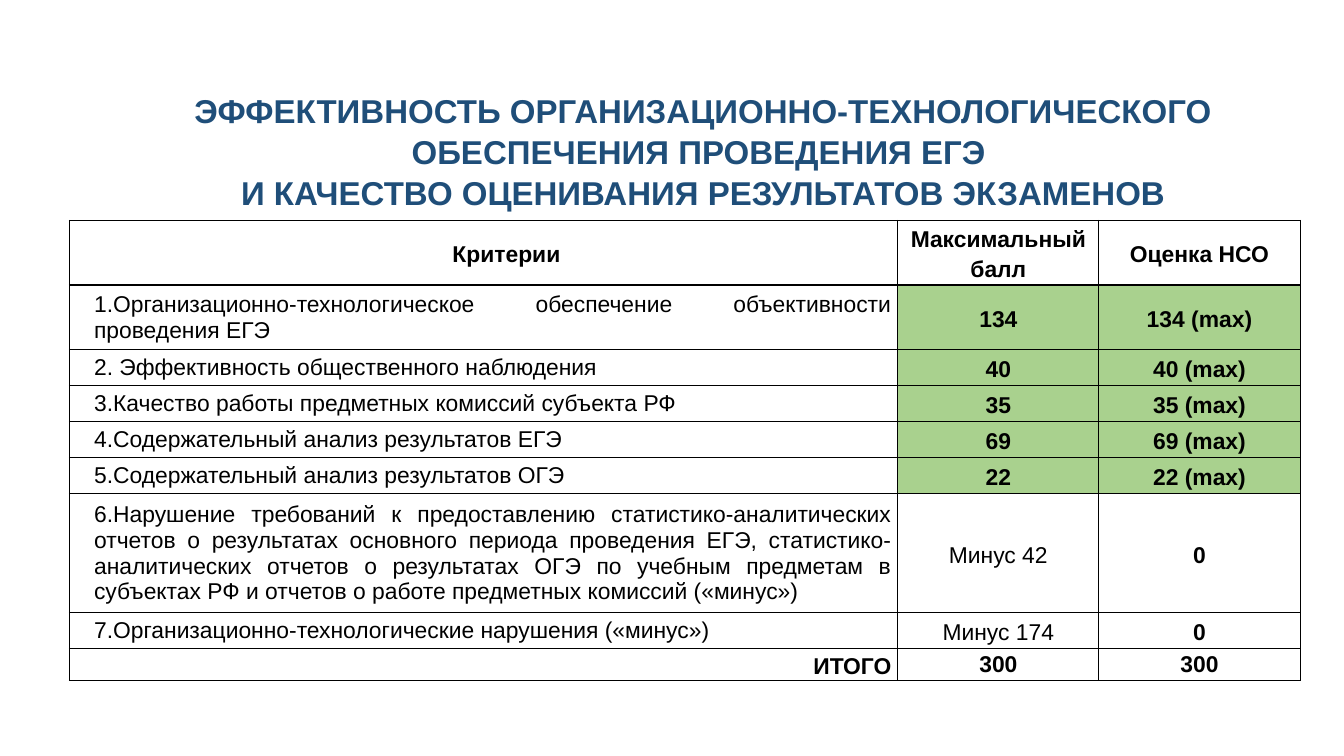
from lxml import etree
from pptx import Presentation
from pptx.dml.color import RGBColor
from pptx.enum.text import MSO_ANCHOR, MSO_AUTO_SIZE, PP_ALIGN
from pptx.oxml.ns import qn
from pptx.util import Pt

CENTER, JUSTIFY, RIGHT = PP_ALIGN.CENTER, PP_ALIGN.JUSTIFY, PP_ALIGN.RIGHT
MIDDLE = MSO_ANCHOR.MIDDLE
NO_AUTOFIT = MSO_AUTO_SIZE.NONE
TITLE_ONLY = 5

COLORS = {"heading": "1F4E79", "text": "000000", "border": "000000", "maximum": "A9D18E"}

HEADING = [
    "ЭФФЕКТИВНОСТЬ ОРГАНИЗАЦИОННО-ТЕХНОЛОГИЧЕСКОГО ОБЕСПЕЧЕНИЯ ПРОВЕДЕНИЯ ЕГЭ ",
    "И КАЧЕСТВО ОЦЕНИВАНИЯ РЕЗУЛЬТАТОВ ЭКЗАМЕНОВ",
]
HEADER = ("Критерии", "Максимальный балл", "Оценка НСО")
CRITERIA = [
    ("1.Организационно-технологическое обеспечение объективности проведения ЕГЭ",
     "134", "134 (max)"),
    ("2. Эффективность общественного наблюдения", "40", "40 (max)"),
    ("3.Качество работы предметных комиссий субъекта РФ", "35", "35 (max)"),
    ("4.Содержательный анализ результатов ЕГЭ", "69", "69 (max)"),
    ("5.Содержательный анализ результатов ОГЭ", "22", "22 (max)"),
    ("6.Нарушение требований к предоставлению статистико-аналитических отчетов "
     "о результатах основного периода проведения ЕГЭ, статистико-аналитических "
     "отчетов о результатах ОГЭ по учебным предметам в субъектах РФ и отчетов "
     "о работе предметных комиссий («минус»)", "Минус 42", "0"),
    ("7.Организационно-технологические нарушения («минус»)", "Минус 174", "0"),
]
TOTAL = ("ИТОГО", "300", "300")
COLUMN_WIDTHS = [652.3, 158.4, 158.4]
ROW_HEIGHTS = [51, 51] + [28.4] * 4 + [93.6, 28.4, 25.2]


class SlideBuilder:
    def __init__(self, slide, font="Arial"):
        self.slide = slide
        self.font = font

    def add_text(self, paragraph, text, size, color, bold, align, spacing=1.0, indent=0):
        if indent:
            properties = paragraph._p.get_or_add_pPr()
            properties.set("marL", str(Pt(indent)))
            properties.set("indent", "0")
        paragraph.alignment = align
        paragraph.line_spacing = spacing
        paragraph.space_before = paragraph.space_after = Pt(0)
        run = paragraph.add_run()
        run.text = text
        run.font.name = self.font
        run.font.size = Pt(size)
        run.font.bold = bold
        run.font.color.rgb = RGBColor.from_string(COLORS[color])

    def heading(self, lines, left, top, width, height):
        title = self.slide.shapes.title
        title.left, title.top = Pt(left), Pt(top)
        title.width, title.height = Pt(width), Pt(height)
        frame = title.text_frame
        frame.word_wrap = True
        frame.auto_size = NO_AUTOFIT
        frame.vertical_anchor = MIDDLE
        for number, line in enumerate(lines):
            paragraph = frame.add_paragraph() if number else frame.paragraphs[0]
            self.add_text(paragraph, line, 26, "heading", True, CENTER, 1.04)

    def grid(self, left, top, column_widths, row_heights):
        table = self.slide.shapes.add_table(
            len(row_heights), len(column_widths), Pt(left), Pt(top),
            Pt(sum(column_widths)), Pt(sum(row_heights))).table
        table.first_row = table.horz_banding = False
        for column, width in zip(table.columns, column_widths):
            column.width = Pt(width)
        for row, height in zip(table.rows, row_heights):
            row.height = Pt(height)
        return table

    def cell(self, cell, text, bold=True, align=CENTER, spacing=1.15, indent=0, fill=None):
        cell.margin_left = cell.margin_right = Pt(5)
        cell.margin_top = cell.margin_bottom = Pt(0)
        cell.vertical_anchor = MIDDLE
        self.borders(cell)
        if fill:
            cell.fill.solid()
            cell.fill.fore_color.rgb = RGBColor.from_string(COLORS[fill])
        else:
            cell.fill.background()
        self.add_text(cell.text_frame.paragraphs[0], text, 18, "text", bold, align,
                      spacing, indent)

    def borders(self, cell):
        properties = cell._tc.get_or_add_tcPr()
        for side in ("a:lnL", "a:lnR", "a:lnT", "a:lnB"):
            line = etree.SubElement(properties, qn(side), w=str(Pt(1)))
            paint = etree.SubElement(line, qn("a:solidFill"))
            etree.SubElement(paint, qn("a:srgbClr"), val=COLORS["border"])


def main():
    presentation = Presentation()
    presentation.slide_width, presentation.slide_height = Pt(1058.4), Pt(595.44)
    slide = presentation.slides.add_slide(presentation.slide_layouts[TITLE_ONLY])
    builder = SlideBuilder(slide)
    builder.heading(HEADING, 118.1, 67.7, 871.9, 102.2)

    scores = builder.grid(54.7, 173.5, COLUMN_WIDTHS, ROW_HEIGHTS)
    for column, label in enumerate(HEADER):
        builder.cell(scores.cell(0, column), label, indent=0 if column else 36)

    for row, (criterion, maximum, score) in enumerate(CRITERIA, start=1):
        penalty = maximum.startswith("Минус")
        fill = None if penalty else "maximum"
        builder.cell(scores.cell(row, 0), criterion, False, JUSTIFY, 1.0, 14.4)
        builder.cell(scores.cell(row, 1), maximum, not penalty, fill=fill)
        builder.cell(scores.cell(row, 2), score, fill=fill)

    last = len(ROW_HEIGHTS) - 1
    builder.cell(scores.cell(last, 0), TOTAL[0], align=RIGHT, indent=36)
    for column in (1, 2):
        builder.cell(scores.cell(last, column), TOTAL[column], spacing=1.0)

    presentation.save("out.pptx")


if __name__ == "__main__":
    main()
